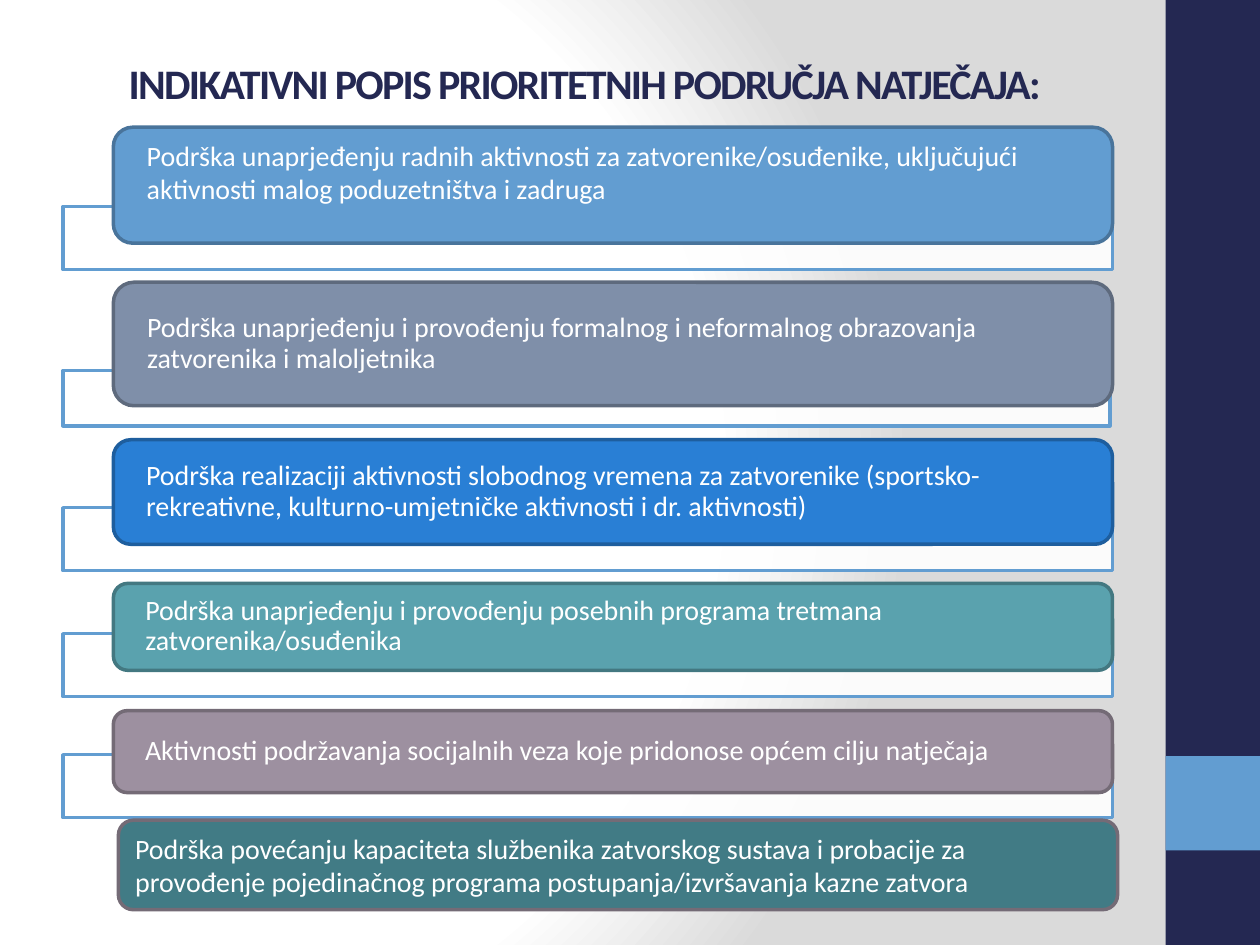
"""Build a slide listing the priority areas of the call as stacked boxes."""
from pptx import Presentation
from pptx.dml.color import RGBColor
from pptx.enum.shapes import MSO_SHAPE
from pptx.enum.text import MSO_ANCHOR, PP_ALIGN
from pptx.oxml import parse_xml
from pptx.oxml.ns import nsdecls, qn
from pptx.util import Inches, Pt

COLORS = {
    "navy": "242852", "sky": "629DD1", "white": "FFFFFF", "silver": "DADADA",
    "sky_edge": "49749B", "slate": "7F8FA9", "slate_edge": "5E6A7D",
    "blue": "297FD5", "blue_edge": "1E5E9E", "teal": "5AA2AE",
    "teal_edge": "437881", "mauve": "9D90A0", "mauve_edge": "746B76",
    "deep_teal": "417B85",
}
TITLE = "INDIKATIVNI POPIS PRIORITETNIH PODRUČJA NATJEČAJA:"
AREAS = [
    dict(text="Podrška unaprjeđenju radnih aktivnosti za zatvorenike/osuđenike, "
              "uključujući aktivnosti malog poduzetništva i zadruga",
         fill="sky", edge="sky_edge", top=1.01, height=0.92, frame=(1.64, 8.33, 0.5),
         spacing=1.0, bottom=0.21),
    dict(text="Podrška unaprjeđenju i provođenju formalnog i neformalnog obrazovanja "
              "zatvorenika i maloljetnika",
         fill="slate", edge="slate_edge", top=2.24, height=0.98, frame=(2.94, 8.31, 0.44)),
    dict(text="Podrška realizaciji aktivnosti slobodnog vremena za zatvorenike "
              "(sportsko-rekreativne, kulturno-umjetničke aktivnosti i dr. aktivnosti)",
         fill="blue", edge="blue_edge", top=3.49, height=0.83, frame=(4.03, 8.33, 0.5)),
    dict(text="Podrška unaprjeđenju i provođenju posebnih programa tretmana "
              "zatvorenika/osuđenika",
         fill="teal", edge="teal_edge", top=4.63, height=0.69, frame=(5.03, 8.33, 0.5)),
    dict(text="Aktivnosti podržavanja socijalnih veza koje pridonose općem cilju natječaja",
         fill="mauve", edge="mauve_edge", top=5.64, height=0.65, frame=(5.99, 8.33, 0.5)),
    dict(text="Podrška povećanju kapaciteta službenika zatvorskog sustava i probacije za "
              "provođenje pojedinačnog programa postupanja/izvršavanja kazne zatvora",
         fill="deep_teal", edge="mauve_edge", top=6.51, height=0.71, left=0.94,
         spacing=1.0, inset=0.1),
]
SIDEBAR = [("navy", 0, 7.5), ("sky", 6, 0.75)]


def color(name):
    return RGBColor.from_string(COLORS[name])


def set_values(target, values):
    for name, value in values.items():
        setattr(target, name, value)


def paint_background(slide):
    slide.background.fill.gradient()
    stops = "".join(
        f'<a:gs pos="{position * 1000}"><a:srgbClr val="{COLORS[name]}"/></a:gs>'
        for position, name in [(0, "white"), (75, "white"), (100, "silver")])
    gradient = parse_xml(
        f'<a:gradFill {nsdecls("a")} rotWithShape="1"><a:gsLst>{stops}</a:gsLst>'
        '<a:path path="circle"><a:fillToRect l="20000" t="50000" r="100000" b="50000"/>'
        '</a:path></a:gradFill>')
    current = next(slide.element.iter(qn("a:gradFill")))
    current.getparent().replace(current, gradient)


def add_box(slide, kind, bounds, fill, edge=None):
    shape = slide.shapes.add_shape(kind, *map(Inches, bounds))
    shape.shadow.inherit = False
    shape.fill.solid()
    shape.fill.fore_color.rgb = color(fill)
    if edge:
        shape.line.color.rgb = color(edge)
        shape.line.width = Pt(2)
    else:
        shape.line.fill.background()
    return shape


def write_text(shape, text, frame_format, paragraph_format, font_format, font_color):
    set_values(shape.text_frame, {
        "word_wrap": True, "vertical_anchor": MSO_ANCHOR.MIDDLE, **frame_format})
    paragraph = shape.text_frame.paragraphs[0]
    set_values(paragraph, paragraph_format)
    run = paragraph.add_run()
    run.text = text
    set_values(run.font, {"name": "Calibri", **font_format})
    run.font.color.rgb = color(font_color)
    return run


def add_title(slide):
    title = slide.shapes.title
    set_values(title, {"left": Inches(0.4), "top": Inches(0.03),
                       "width": Inches(8.48), "height": Inches(1.25)})
    run = write_text(title, TITLE, {}, {"alignment": PP_ALIGN.CENTER},
                     {"size": Pt(24), "bold": True}, "navy")
    run.font._element.set("spc", "-100")


def add_area(slide, area):
    if "frame" in area:
        top, width, height = area["frame"]
        frame = add_box(slide, MSO_SHAPE.RECTANGLE, (0.5, top, width, height), "white", "sky")
        white = frame.fill._xPr.find(qn("a:solidFill"))[0]
        white.append(parse_xml(f'<a:alpha {nsdecls("a")} val="90000"/>'))
    bounds = (area.get("left", 0.9), area["top"], 7.93, area["height"])
    box = add_box(slide, MSO_SHAPE.ROUNDED_RECTANGLE, bounds, area["fill"], area["edge"])
    inset = Inches(area.get("inset", 0.22))
    write_text(box, area["text"],
               {"margin_left": inset, "margin_right": inset, "margin_top": 0,
                "margin_bottom": Inches(area.get("bottom", 0))},
               {"alignment": PP_ALIGN.LEFT, "line_spacing": area.get("spacing", 0.9)},
               {"size": Pt(16)}, "white")


def main():
    presentation = Presentation()
    set_values(presentation, {"slide_width": Inches(10), "slide_height": Inches(7.5)})
    slide = presentation.slides.add_slide(presentation.slide_layouts[5])
    paint_background(slide)
    for fill, top, height in SIDEBAR:
        add_box(slide, MSO_SHAPE.RECTANGLE, (9.25, top, 0.75, height), fill)
    add_title(slide)
    for area in AREAS:
        add_area(slide, area)
    presentation.save("out.pptx")


if __name__ == "__main__":
    main()
